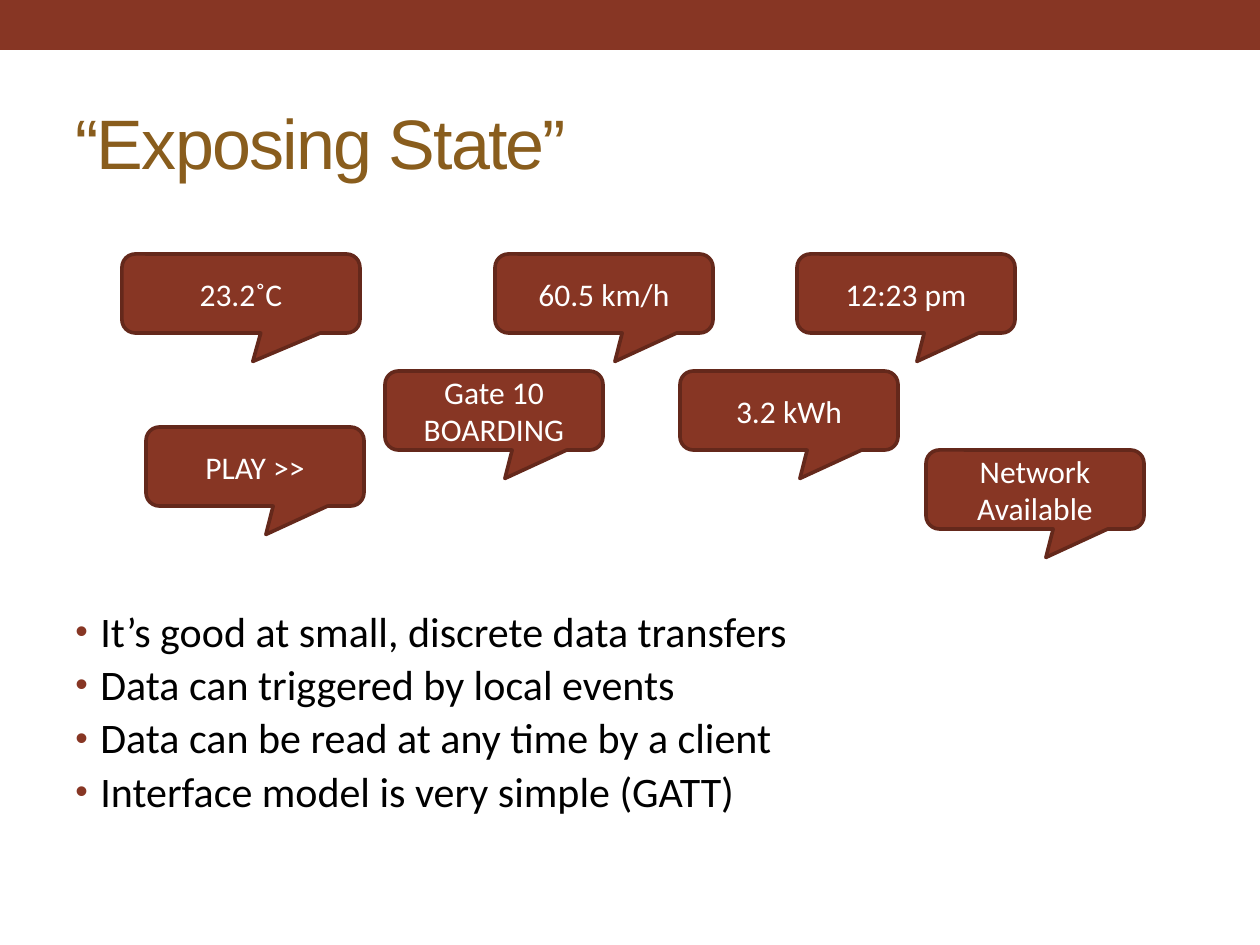
import pptx
import pptx.dml.color
import pptx.enum.shapes
import pptx.enum.text
import pptx.oxml.ns
import pptx.util
from lxml import etree

EMU_PER_PX = 914400 / 126
RUST, DARK_RUST, GOLD = "873624", "64281B", "895D1D"
BLACK, WHITE = "000000", "FFFFFF"
ALIGN = pptx.enum.text.PP_ALIGN
ANCHOR = pptx.enum.text.MSO_ANCHOR
SHAPE = pptx.enum.shapes.MSO_SHAPE

CALLOUT_HEIGHT = 79
CALLOUTS = [  # text, left, top, width
    ("23.2˚C", 122, 254, 238),
    ("Gate 10 BOARDING", 385, 371, 218),
    ("12:23 pm", 797, 254, 218),
    ("60.5 km/h", 495, 254, 218),
    ("3.2 kWh", 680, 371, 218),
    ("PLAY >>", 146, 427, 218),
    ("Network Available", 926, 450, 218),
]
POINTS = [
    "It’s good at small, discrete data transfers",
    "Data can triggered by local events",
    "Data can be read at any time by a client",
    "Interface model is very simple (GATT)",
]


def px(length):
    return pptx.util.Emu(round(length * EMU_PER_PX))


def color(hex_value):
    return pptx.dml.color.RGBColor.from_string(hex_value)


def add_bullet(paragraph, indent):
    properties = paragraph._p.get_or_add_pPr()
    properties.set("marL", str(px(indent)))
    properties.set("indent", str(-px(indent)))

    def add(parent, tag, **attributes):
        return etree.SubElement(parent, pptx.oxml.ns.qn(tag), **attributes)

    add(add(properties, "a:buClr"), "a:srgbClr", val=RUST)
    add(properties, "a:buSzPct", val="85000")
    add(properties, "a:buFont", typeface="Arial")
    add(properties, "a:buChar", char="•")


def write(frame, *lines, font="Calibri", size=18, fill=BLACK, align=ALIGN.LEFT,
          anchor=ANCHOR.TOP, bullet_indent=0, line_spacing=None, gap=0, tracking=0):
    """Fill a text frame with one paragraph per line."""
    frame.word_wrap = True
    frame.vertical_anchor = anchor
    for index, line in enumerate(lines):
        paragraph = frame.add_paragraph() if index else frame.paragraphs[0]
        if bullet_indent:
            add_bullet(paragraph, bullet_indent)
        paragraph.alignment = align
        paragraph.line_spacing = line_spacing
        if index and gap:
            paragraph.space_before = pptx.util.Pt(gap)
        run = paragraph.add_run()
        run.text = line
        run.font.name = font
        run.font.size = pptx.util.Pt(size)
        run.font.color.rgb = color(fill)
        if tracking:
            run.font._element.set("spc", str(tracking * 100))


def add_filled_shape(slide, kind, left, top, width, height, outline=None):
    shape = slide.shapes.add_shape(kind, px(left), px(top), px(width), px(height))
    shape.shadow.inherit = False
    shape.fill.solid()
    shape.fill.fore_color.rgb = color(RUST)
    if outline:
        shape.line.color.rgb = color(outline)
        shape.line.width = pptx.util.Pt(2.08)
    else:
        shape.line.fill.background()
    return shape


def add_text(slide, left, top, width, height, *lines, **text_format):
    box = slide.shapes.add_textbox(px(left), px(top), px(width), px(height))
    write(box.text_frame, *lines, **text_format)


def add_header(slide, left, top, width):
    add_filled_shape(slide, SHAPE.RECTANGLE, left, top, width, 50)
    add_text(slide, left + 63, top + 73, width - 126, 136, "“Exposing State”",
             font="Arial", size=40, fill=GOLD, anchor=ANCHOR.MIDDLE, tracking=-1)


def add_callout(slide, text, left, top, width, height):
    callout = add_filled_shape(slide, SHAPE.ROUNDED_RECTANGULAR_CALLOUT,
                               left, top, width, height, outline=DARK_RUST)
    for index, value in enumerate((0.05, 0.86, 0.17)):
        callout.adjustments[index] = value
    write(callout.text_frame, text, fill=WHITE, align=ALIGN.CENTER,
          anchor=ANCHOR.MIDDLE)


def add_points(slide, left, top, width, height):
    add_text(slide, left, top, width, height, *POINTS, size=24,
             bullet_indent=25, line_spacing=0.9, gap=4.5)


def main():
    presentation = pptx.Presentation()
    presentation.slide_width, presentation.slide_height = px(1260), px(945)
    slide = presentation.slides.add_slide(presentation.slide_layouts[6])
    add_header(slide, 0, 0, 1260)
    add_points(slide, 63, 605, 1134, 287)
    for text, left, top, width in CALLOUTS:
        add_callout(slide, text, left, top, width, CALLOUT_HEIGHT)
    presentation.save("out.pptx")


if __name__ == "__main__":
    main()
